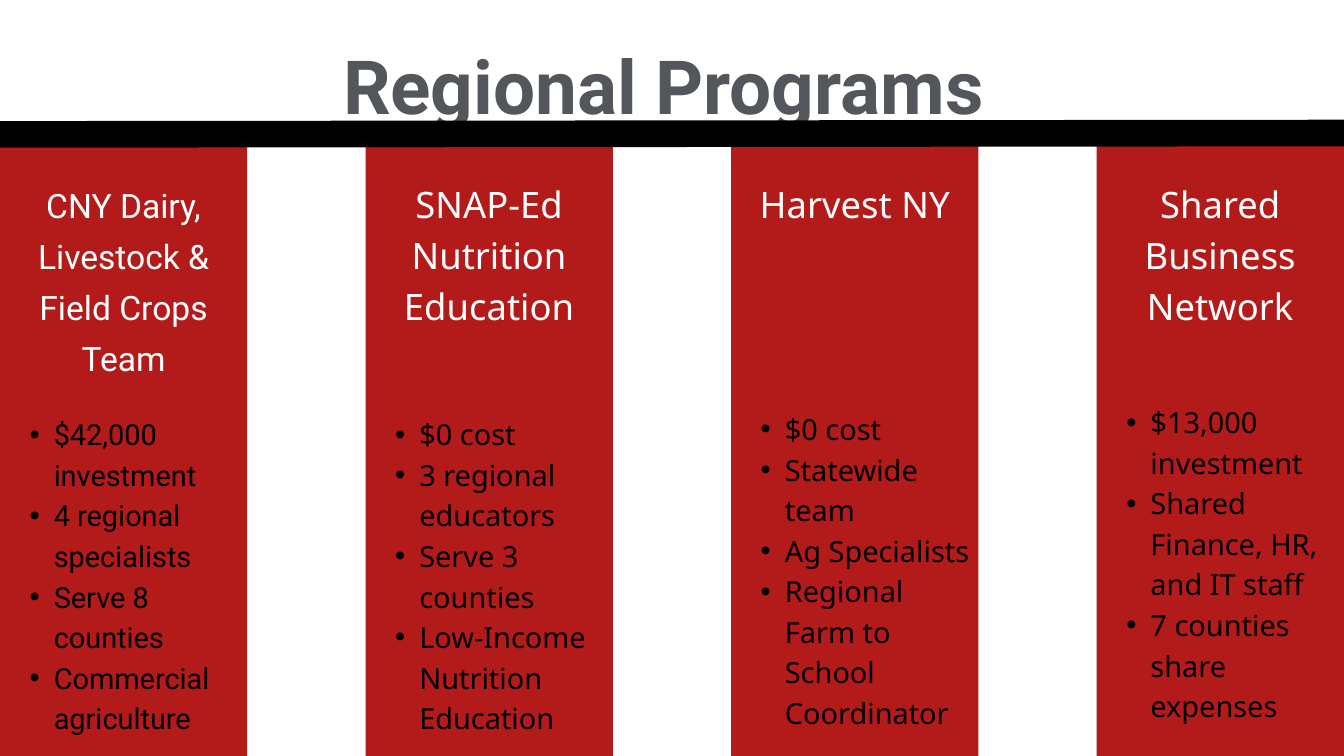
import pptx
import pptx.util
import pptx.dml.color
import pptx.enum.shapes
import pptx.enum.text
import pptx.oxml.ns
from lxml import etree

Inches, Pt = pptx.util.Inches, pptx.util.Pt
RGBColor = pptx.dml.color.RGBColor
PP_ALIGN = pptx.enum.text.PP_ALIGN
qn = pptx.oxml.ns.qn

RED = RGBColor(0xB3, 0x1B, 0x1B)
GRAY = RGBColor(0x53, 0x56, 0x5A)
WHITE = RGBColor(0xFF, 0xFF, 0xFF)
BLACK = RGBColor(0, 0, 0)

# Content: heading, font, heading size, top and height of the bullets, bullets
TITLE = "Regional Programs"
PROGRAMS = [
    ("CNY Dairy, Livestock & Field Crops Team", "Roboto", 18, 3.06, 2.44,
     ["$42,000 investment", "4 regional specialists", "Serve 8 counties",
      "Commercial agriculture"]),
    ("SNAP-Ed Nutrition Education", "Noto Sans", 19.5, 3.06, 2.44,
     ["$0 cost", "3 regional educators", "Serve 3 counties",
      "Low-Income Nutrition Education"]),
    ("Harvest NY", "Noto Sans", 19.5, 3.02, 2.13,
     ["$0 cost", "Statewide team", "Ag Specialists",
      "Regional Farm to School Coordinator"]),
    ("Shared Business Network", "Noto Sans", 19.5, 2.97, 2.44,
     ["$13,000 investment", "Shared Finance, HR, and IT staff",
      "7 counties share expenses"]),
]

# Layout: a 16:9 page with evenly spaced columns
PAGE_WIDTH = 10
PAGE_HEIGHT = PAGE_WIDTH * 9 / 16
COLUMN_WIDTH, COLUMN_TOP = 1.84, 1.05
COLUMN_STEP = (PAGE_WIDTH - COLUMN_WIDTH) / (len(PROGRAMS) - 1)
HEADING_TOP = 1.27
INSET = 0.03


def add_bullet(paragraph):
    properties = paragraph._p.get_or_add_pPr()
    properties.set("marL", str(Inches(0.37)))
    properties.set("indent", str(Inches(-0.18)))
    etree.SubElement(properties, qn("a:buFont")).set("typeface", "Arial")
    etree.SubElement(properties, qn("a:buChar")).set("char", "•")


def add_text(page, place, lines, font, size, color, spacing,
             inset=0, bold=False, bullets=False):
    box = page.shapes.add_textbox(*map(Inches, place))
    frame = box.text_frame
    frame.word_wrap = True
    frame.margin_left = frame.margin_right = Inches(inset)
    frame.margin_top = frame.margin_bottom = Inches(inset)
    frame.text = "\n".join(lines)
    for paragraph in frame.paragraphs:
        if bullets:
            paragraph.level = 1
            add_bullet(paragraph)
        paragraph.alignment = PP_ALIGN.LEFT if bullets else PP_ALIGN.CENTER
        paragraph.line_spacing = Pt(spacing)
        for span in paragraph.runs:
            span.font.name = font
            span.font.size = Pt(size)
            span.font.bold = bold
            span.font.color.rgb = color


deck = pptx.Presentation()
deck.slide_width, deck.slide_height = Inches(PAGE_WIDTH), Inches(PAGE_HEIGHT)
page = deck.slides.add_slide(deck.slide_layouts[6])

# Title
add_text(page, (1.69, -0.01, 6.49, 0.88), [TITLE], "Roboto", 40, GRAY, 70.3,
         bold=True)

# Program columns
for index, program in enumerate(PROGRAMS):
    heading, font, size, bullet_top, bullet_height, bullets = program
    left = index * COLUMN_STEP
    panel = page.shapes.add_shape(
        pptx.enum.shapes.MSO_SHAPE.RECTANGLE, Inches(left), Inches(COLUMN_TOP),
        Inches(COLUMN_WIDTH), Inches(PAGE_HEIGHT - COLUMN_TOP))
    panel.shadow.inherit = False
    panel.fill.solid()
    panel.fill.fore_color.rgb = RED
    panel.line.fill.background()
    add_text(page, (left, HEADING_TOP, COLUMN_WIDTH, PAGE_HEIGHT - HEADING_TOP),
             [heading], font, size, WHITE, 27.3, inset=INSET)
    add_text(page,
             (left + INSET, bullet_top, COLUMN_WIDTH - 2 * INSET, bullet_height),
             bullets, font, 15.5, BLACK, 21.7, bullets=True)

# Black rule under the title
rule = page.shapes.add_connector(
    pptx.enum.shapes.MSO_CONNECTOR.STRAIGHT,
    Inches(0), Inches(1), Inches(PAGE_WIDTH), Inches(0.99))
rule.line.color.rgb = BLACK
rule.line.width = Pt(14.25)
etree.SubElement(rule._element.spPr, qn("a:effectLst"))

deck.save("out.pptx")
